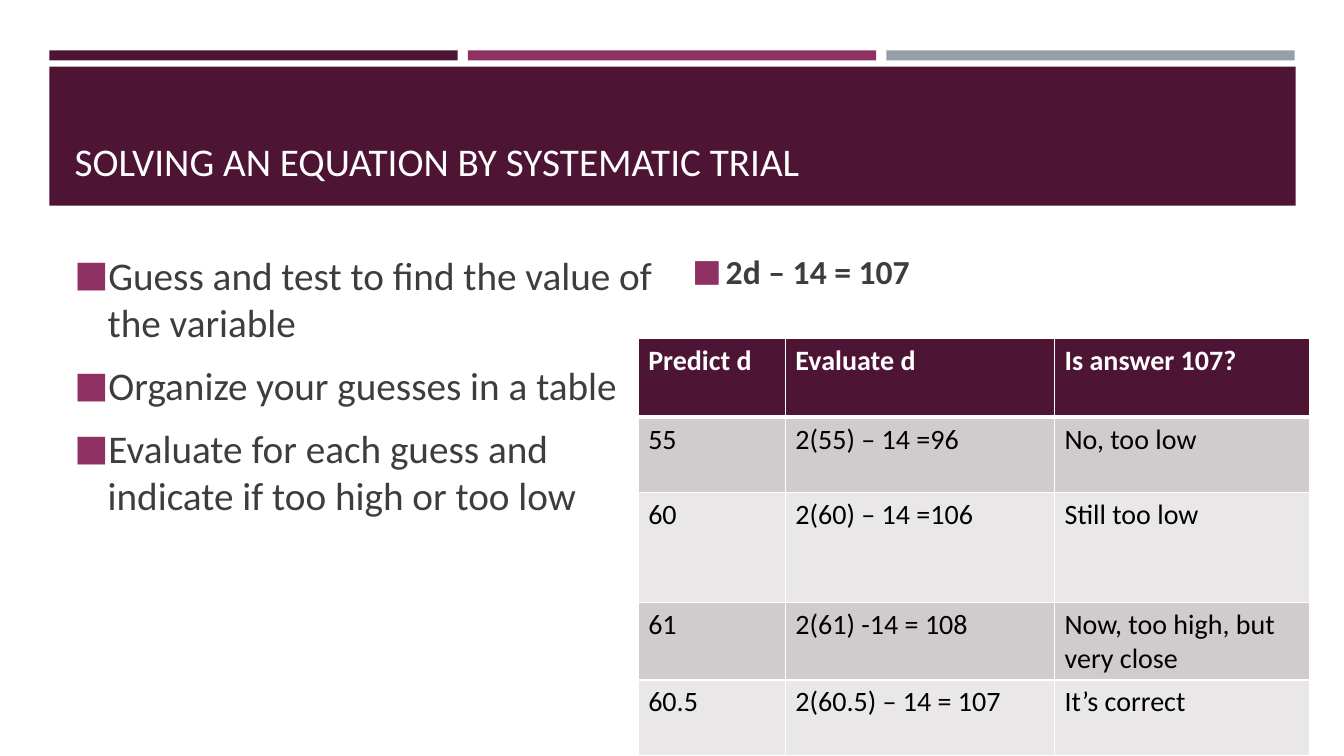
from lxml import etree
from pptx import Presentation
from pptx.dml.color import RGBColor
from pptx.enum.shapes import MSO_SHAPE
from pptx.enum.text import MSO_ANCHOR, PP_ALIGN
from pptx.oxml.ns import qn
from pptx.util import Pt

PX = 9144  # 100 px to the inch
RECTANGLE = MSO_SHAPE.RECTANGLE
TOP, BOTTOM = MSO_ANCHOR.TOP, MSO_ANCHOR.BOTTOM
LEFT = PP_ALIGN.LEFT
TITLE_ONLY = 5

FONT = "Calibri"
PLUM, MAGENTA, GREY = "4D1434", "903163", "969FA7"
WHITE, BLACK, CHARCOAL = "FFFFFF", "000000", "3D3D3D"
ROW_FILLS = ("D0CCCE", "E9E7E8")

STEPS = [
    "Guess and test to find the value of the variable",
    "Organize your guesses in a table",
    "Evaluate for each guess and indicate if too high or too low",
]
TRIALS = [
    ("Predict d", "Evaluate d", "Is answer 107?"),
    ("55", "2(55) – 14 =96", "No, too low"),
    ("60", "2(60) – 14 =106", "Still too low"),
    ("61", "2(61) -14 = 108", "Now, too high, but very close"),
    ("60.5", "2(60.5) – 14 = 107", "It’s correct"),
]
COLUMN_WIDTHS = (146, 267, 253)
ROW_HEIGHTS = (78, 75, 109, 75, 75)


def px(*lengths):
    return [length * PX for length in lengths]


def colour(value):
    return RGBColor.from_string(value)


def write(para, text, size, ink, bold=False):
    para.alignment = LEFT
    span = para.add_run()
    span.text = text
    span.font.color.rgb = colour(ink)
    for name, value in {"name": FONT, "size": Pt(size), "bold": bold}.items():
        setattr(span.font, name, value)


def add_band(page, box, fill):
    band = page.shapes.add_shape(RECTANGLE, *px(*box))
    band.shadow.inherit = False
    band.fill.solid()
    band.fill.fore_color.rgb = colour(fill)
    band.line.fill.background()


def add_header(page, box):
    """Place three stripes, and the title on a band below them."""
    left, top, width, height = box
    gap, stripe_height, band_top = 10, 10, 16
    stripe_width = (width - 2 * gap) // 3
    for index, fill in enumerate((PLUM, MAGENTA, GREY)):
        stripe_left = left + index * (stripe_width + gap)
        add_band(page, (stripe_left, top, stripe_width, stripe_height), fill)
    add_band(page, (left, top + band_top, width, height - band_top), PLUM)

    title = page.shapes.title
    title_box = px(left + 15, top + 30, width - 30, height - 46)
    for name, value in zip(("left", "top", "width", "height"), title_box):
        setattr(title, name, value)
    title.text_frame.vertical_anchor = BOTTOM
    title.text_frame.word_wrap = True
    write(title.text_frame.paragraphs[0],
          "SOLVING AN EQUATION BY SYSTEMATIC TRIAL", 28, WHITE)
    page.shapes._spTree.append(title._element)  # bring in front of the band


def add_bullet(para):
    properties = para._p.get_or_add_pPr()
    indent = 33 * PX
    properties.set("marL", str(indent))
    properties.set("indent", str(-indent))
    bullet_colour = etree.SubElement(properties, qn("a:buClr"))
    etree.SubElement(bullet_colour, qn("a:srgbClr"), val=MAGENTA)
    etree.SubElement(properties, qn("a:buSzPct"), val="92000")
    etree.SubElement(properties, qn("a:buFont"), typeface=FONT)
    etree.SubElement(properties, qn("a:buChar"), char="■")


def add_bullets(page, box, lines, size, bold=False):
    frame = page.shapes.add_textbox(*px(*box)).text_frame
    frame.word_wrap = True
    frame.vertical_anchor = TOP
    for index, line in enumerate(lines):
        para = frame.paragraphs[0] if index == 0 else frame.add_paragraph()
        para.space_before = Pt(size * 0.2)
        para.space_after = Pt(6)
        add_bullet(para)
        write(para, line, size, CHARCOAL, bold)


def add_borders(cell, bottom):
    properties = cell._tc.get_or_add_tcPr()
    for side, points in {"L": 1, "R": 1, "T": 1, "B": bottom}.items():
        line = etree.SubElement(properties, qn(f"a:ln{side}"), w=str(Pt(points)))
        fill = etree.SubElement(line, qn("a:solidFill"))
        etree.SubElement(fill, qn("a:srgbClr"), val=WHITE)


def add_trials(page, left, top):
    size = px(left, top, sum(COLUMN_WIDTHS), sum(ROW_HEIGHTS))
    table = page.shapes.add_table(len(TRIALS), len(COLUMN_WIDTHS), *size).table
    for column, width in zip(table.columns, px(*COLUMN_WIDTHS)):
        column.width = width
    for row, height in zip(table.rows, px(*ROW_HEIGHTS)):
        row.height = height
    for row_index, texts in enumerate(TRIALS):
        heading = row_index == 0
        fill = PLUM if heading else ROW_FILLS[(row_index - 1) % 2]
        for column_index, text in enumerate(texts):
            cell = table.cell(row_index, column_index)
            add_borders(cell, 3 if heading else 1)
            cell.fill.solid()
            cell.fill.fore_color.rgb = colour(fill)
            write(cell.text_frame.paragraphs[0], text, 20,
                  WHITE if heading else BLACK, heading)


def main():
    deck = Presentation()
    deck.slide_width, deck.slide_height = px(1333, 750)
    page = deck.slides.add_slide(deck.slide_layouts[TITLE_ONLY])
    add_header(page, (49, 50, 1236, 154))
    add_bullets(page, (64, 244, 593, 397), STEPS, 28)
    add_bullets(page, (677, 244, 593, 397), ["2d – 14 = 107"], 24, True)
    add_trials(page, 633, 336)
    deck.save("out.pptx")


if __name__ == "__main__":
    main()
